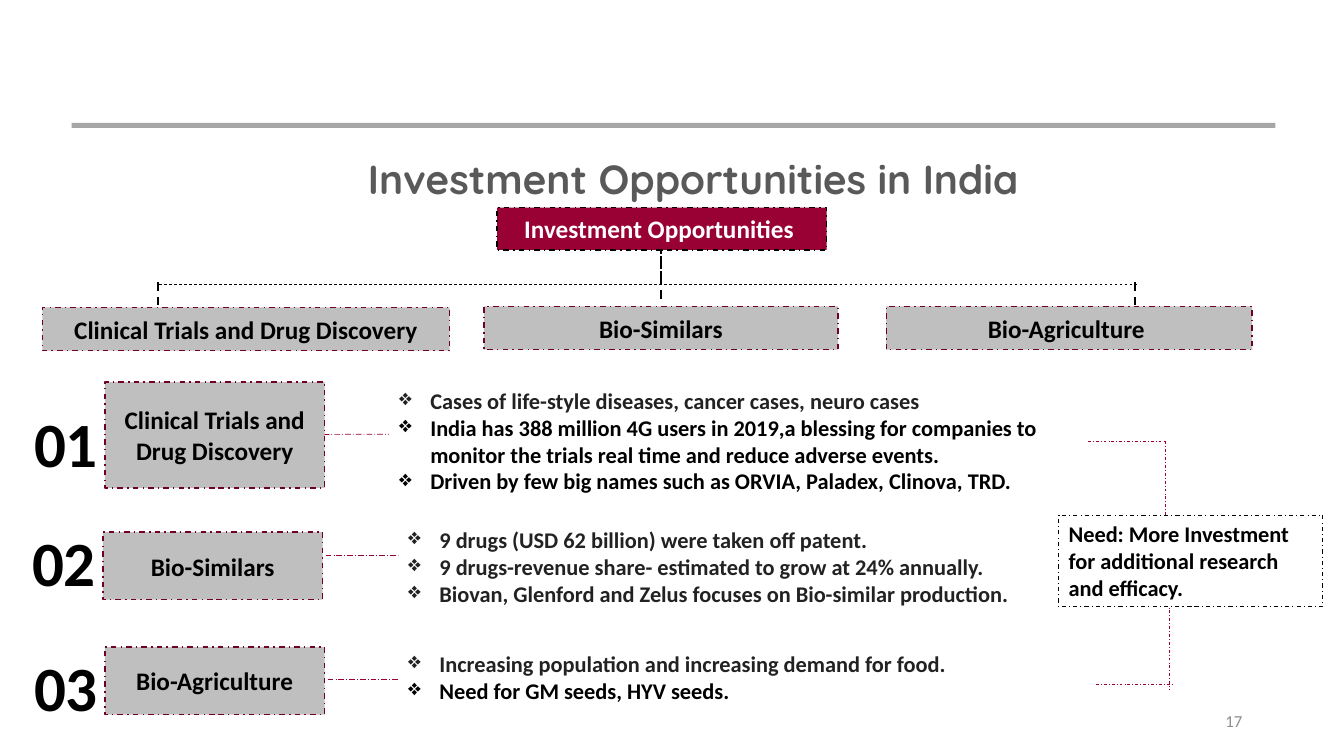
"""Build the slide on investment opportunities in India."""
from dataclasses import dataclass

from lxml import etree
from pptx import Presentation
from pptx.dml.color import RGBColor
from pptx.enum import dml, shapes, text
from pptx.oxml import ns
from pptx.util import Inches, Pt


@dataclass(frozen=True)
class Theme:
    font: str = "Calibri"
    title_font: str = "Quicksand"
    white: str = "FFFFFF"
    black: str = "000000"
    ink: str = "222222"
    title: str = "595959"
    rule: str = "A6A6A6"
    page: str = "8C8C8C"
    crimson: str = "990033"
    border: str = "710026"
    box: str = "BFBFBF"
    title_size: float = 29
    number_size: float = 45
    label_size: float = 18
    body_size: float = 16
    page_size: float = 12


theme = Theme()
DASH = dml.MSO_LINE.DASH
DASH_DOT = dml.MSO_LINE.DASH_DOT
LONG_DASH_DOT = dml.MSO_LINE.LONG_DASH_DOT
LEFT, CENTER, RIGHT = text.PP_ALIGN.LEFT, text.PP_ALIGN.CENTER, text.PP_ALIGN.RIGHT
TOP, MIDDLE, BOTTOM = text.MSO_ANCHOR.TOP, text.MSO_ANCHOR.MIDDLE, text.MSO_ANCHOR.BOTTOM

presentation = Presentation()
presentation.slide_width = Inches(13.33)
presentation.slide_height = Inches(7.5)
slide = presentation.slides.add_slide(presentation.slide_layouts[6])


def add_text(lines, place, size=theme.label_size, colors=(theme.black,), font=theme.font,
             bold=True, align=CENTER, anchor=MIDDLE, wrap=True, fill=None, border=None,
             border_width=1, bullet=None, spacing=None):
    """Add a text box or filled rectangle holding one paragraph per line."""
    position = [Inches(length) for length in place]
    if fill:
        shape = slide.shapes.add_shape(shapes.MSO_SHAPE.RECTANGLE, *position)
        shape.shadow.inherit = False
        shape.fill.solid()
        shape.fill.fore_color.rgb = RGBColor.from_string(fill)
        if border:
            shape.line.color.rgb = RGBColor.from_string(border)
            shape.line.width = Pt(border_width)
            shape.line.dash_style = DASH_DOT
        else:
            shape.line.fill.background()
    else:
        shape = slide.shapes.add_textbox(*position)
    frame = shape.text_frame
    frame.word_wrap = wrap
    frame.vertical_anchor = anchor
    for index, line in enumerate(lines):
        paragraph = frame.paragraphs[0] if index == 0 else frame.add_paragraph()
        paragraph.alignment = align
        if spacing:
            paragraph.line_spacing = spacing
        if bullet:
            properties = paragraph._p.get_or_add_pPr()
            properties.set("marL", str(Inches(0.31)))
            properties.set("indent", str(Inches(-0.31)))
            etree.SubElement(properties, ns.qn("a:buChar")).set("char", bullet)
        run = paragraph.add_run()
        run.text = line
        run.font.name = font
        run.font.size = Pt(size)
        run.font.bold = bold
        run.font.color.rgb = RGBColor.from_string(colors[min(index, len(colors) - 1)])


def add_line(start, end, color, width, dash):
    """Add a straight dashed line between two points."""
    line = slide.shapes.add_connector(
        shapes.MSO_CONNECTOR.STRAIGHT, *[Inches(length) for length in (*start, *end)])
    line.line.color.rgb = RGBColor.from_string(color)
    line.line.width = Pt(width)
    line.line.dash_style = dash
    etree.SubElement(line._element.spPr, ns.qn("a:effectLst"))


rule = slide.shapes.add_shape(
    shapes.MSO_SHAPE.RECTANGLE, Inches(0.71), Inches(1.22), Inches(11.94), Inches(0.05))
rule.shadow.inherit = False
rule.fill.solid()
rule.fill.fore_color.rgb = RGBColor.from_string(theme.rule)
rule.line.fill.background()

add_text(["Investment Opportunities in India"], (3.55, 1.34, 6.91, 0.92), size=theme.title_size,
         colors=[theme.title], font=theme.title_font, align=LEFT, spacing=0.9)
add_text(["17"], (9.42, 6.95, 3, 0.4), size=theme.page_size, colors=[theme.page],
         bold=False, align=RIGHT)

add_line((1.58, 2.82), (11.3, 2.82), theme.black, 0.5, DASH)
for x, top in [(6.56, 2.25), (6.56, 2.44), (1.57, 2.8), (11.26, 2.8)]:
    add_line((x, top), (x, top + 0.55), theme.black, 1.5, DASH)

add_text(["Investment Opportunities "], (4.93, 2.06, 3.27, 0.42), colors=[theme.white],
         fill=theme.crimson, border=theme.black)
branches = [
    ("Clinical Trials and Drug Discovery", (0.42, 3.05, 4.04, 0.43)),
    ("Bio-Similars", (4.8, 3.04, 3.51, 0.43)),
    ("Bio-Agriculture ", (8.79, 3.04, 3.63, 0.43)),
]
for label, place in branches:
    add_text([label], place, fill=theme.box, border=theme.border)

rows = [
    ("01", (0.23, 3.95), "Clinical Trials and Drug Discovery", (1.04, 3.79, 2.18, 1.05),
     (3.21, 4.31), (10.79, 4.28), (3.86, 3.79, 6.94, 1.18), (theme.ink, theme.black),
     ["Cases of life-style diseases, cancer cases, neuro cases",
      "India has 388 million 4G users in 2019,a blessing for companies to monitor the trials "
      "real time and reduce adverse events.",
      "Driven by few big names such as ORVIA, Paladex, Clinova, TRD."]),
    ("02", (0.21, 5.13), "Bio-Similars", (1.02, 5.28, 2.18, 0.67),
     (3.23, 5.51), (10.81, 5.51), (3.95, 5.17, 6.89, 1.18), (theme.ink,),
     ["9 drugs (USD 62 billion) were taken off patent.",
      "9 drugs-revenue share- estimated to grow at 24% annually.",
      "Biovan, Glenford and Zelus focuses on Bio-similar production."]),
    ("03", (0.23, 6.37), "Bio-Agriculture", (1.04, 6.42, 2.18, 0.67),
     (3.25, 6.74), (10.83, 6.74), (3.95, 6.4, 6.93, 0.64), (theme.ink, theme.black),
     ["Increasing population and increasing demand for food.",
      "Need for GM seeds, HYV seeds."]),
]
for number, corner, label, label_place, start, end, points_place, colors, points in rows:
    add_line(start, end, theme.crimson, 0.5, LONG_DASH_DOT)
    add_text([label], label_place, fill=theme.box, border=theme.border)
    add_text([number], (*corner, 0.84, 0.86), size=theme.number_size, align=RIGHT,
             anchor=BOTTOM, wrap=False)
    add_text(points, points_place, size=theme.body_size, colors=colors, align=LEFT,
             anchor=TOP, fill=theme.white, bullet="❖")

bracket = [
    ((10.79, 4.38), (11.56, 4.38)),
    ((11.56, 4.38), (11.56, 5.13)),
    ((11.6, 5.9), (11.6, 6.84)),
    ((10.87, 6.79), (11.64, 6.79)),
]
for start, end in bracket:
    add_line(start, end, theme.crimson, 0.5, DASH_DOT)
add_text(["Need: More Investment for additional research and efficacy."],
         (10.5, 5.11, 2.62, 0.91), size=theme.body_size, align=LEFT, anchor=TOP,
         fill=theme.white, border=theme.black, border_width=0.75)

presentation.save("out.pptx")
